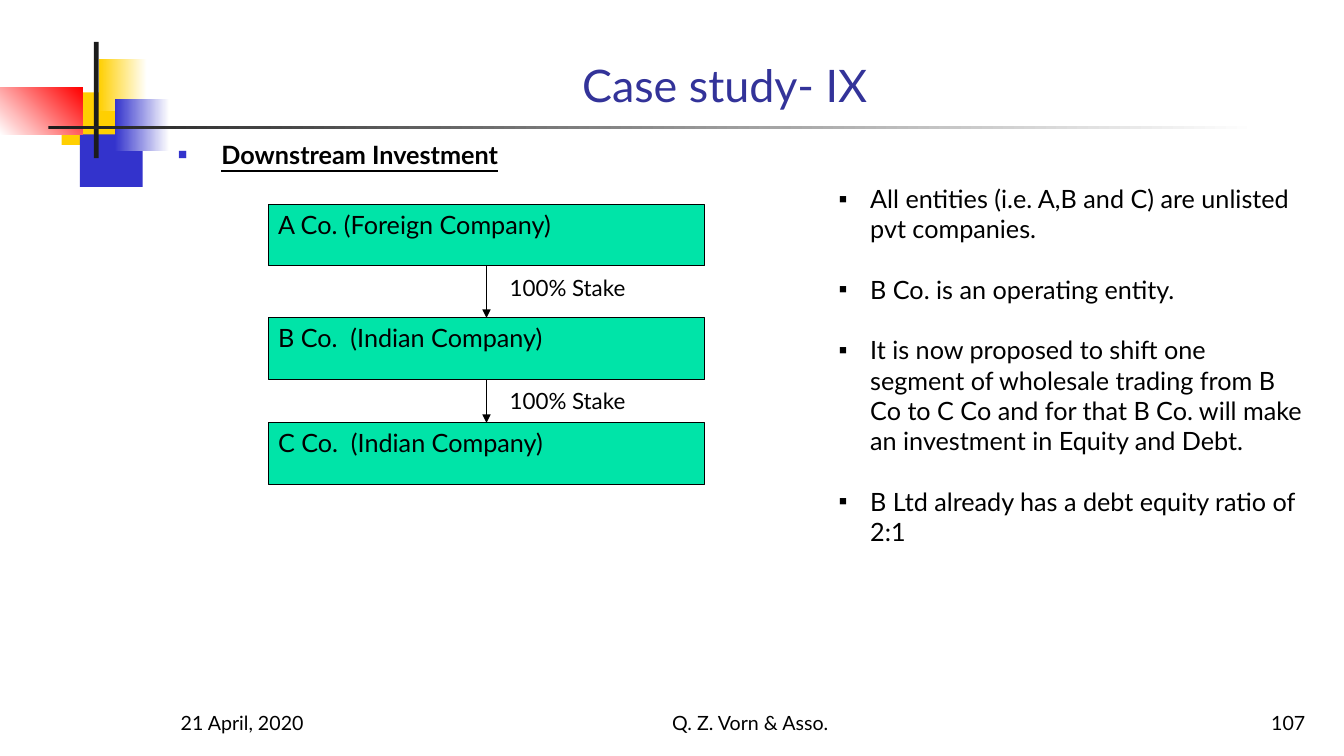
from pptx import Presentation
from pptx.util import Pt
from pptx.dml.color import RGBColor
from pptx.enum.shapes import MSO_SHAPE as Kind, MSO_CONNECTOR as Wire
from pptx.enum.text import MSO_ANCHOR as Anchor, MSO_AUTO_SIZE as Fit, PP_ALIGN as Align
from lxml.etree import SubElement
from pptx.oxml.ns import qn


def tint(code):
    return RGBColor.from_string(code)


def write(para, text, size, color="000000", align=Align.LEFT):
    para.alignment = align
    run = para.add_run()
    run.text = text
    run.font.name = "Lato"
    run.font.size = Pt(size)
    run.font.color.rgb = tint(color)
    return run


deck = Presentation()
deck.slide_width, deck.slide_height = Pt(960), Pt(540)
slide = deck.slides.add_slide(deck.slide_layouts[1])
shapes = slide.shapes

decor = [
    (44, 66, 46, 37.5, "FFCF01", None, 0),
    (57, 96, 45, 37.5, "3333CC", None, 0),
    (70.5, 42, 34.5, 37.5, "FFCF01", "FFFFFF", 0),
    (82, 70.5, 39, 37.5, "3333CC", "FFFFFF", 0),
    (0, 62.5, 59, 33.5, "FFFFFF", "FF0000", 45),
    (67, 30, 3.5, 83, "1C1C1C", None, 0),
    (34.5, 90, 864, 2.25, "1C1C1C", "FFFFFF", 0),
]
for x, y, w, h, start, end, angle in decor:
    block = shapes.add_shape(Kind.RECTANGLE, Pt(x), Pt(y), Pt(w), Pt(h))
    block.shadow.inherit = False
    block.line.fill.background()
    if end:
        block.fill.gradient()
        block.fill.gradient_angle = angle
        for stop, code, place in zip(block.fill.gradient_stops, (start, end), (0, 1)):
            stop.color.rgb = tint(code)
            stop.position = place
    else:
        block.fill.solid()
        block.fill.fore_color.rgb = tint(start)

title = shapes.title
title.left, title.top, title.width, title.height = Pt(211), Pt(16.5), Pt(613.5), Pt(67)
title.text_frame.vertical_anchor = Anchor.BOTTOM
title.text_frame.auto_size = Fit.NONE
write(title.text_frame.paragraphs[0], "Case study- IX", 32, "333399", Align.CENTER)

body = slide.placeholders[1]
body.left, body.top, body.width, body.height = Pt(120), Pt(96), Pt(705), Pt(408)
body.text_frame.auto_size = Fit.NONE
topic = body.text_frame.paragraphs[0]
head = write(topic, "Downstream Investment", 18)
head.font.bold = head.font.underline = True

notes = shapes.add_textbox(Pt(592), Pt(127.5), Pt(348), Pt(312.5))
notes.text_frame.word_wrap = True
points = [
    "All entities (i.e. A,B and C) are unlisted pvt companies.",
    "B Co. is an operating entity.",
    "It is now proposed to shift one segment of wholesale trading from B Co to C Co "
    "and for that B Co. will make an investment in Equity and Debt.",
    "B Ltd already has a debt equity ratio of 2:1",
]
bullets = [(topic, 31, "■", "3333CC", 60)]
for i, text in enumerate(points):
    para = notes.text_frame.add_paragraph() if i else notes.text_frame.paragraphs[0]
    para.space_before = Pt(21.6 if i else 0)
    write(para, text, 18)
    bullets.append((para, 22.5, "▪", "000000", 100))

for para, inset, mark, code, scale in bullets:
    props = para._p.get_or_add_pPr()
    props.set("marL", str(Pt(inset)))
    props.set("indent", str(-Pt(inset)))
    SubElement(SubElement(props, qn("a:buClr")), qn("a:srgbClr"), val=code)
    SubElement(props, qn("a:buSzPct"), val=str(scale * 1000))
    SubElement(props, qn("a:buFont"), typeface="Arial")
    SubElement(props, qn("a:buChar"), char=mark)

left, wide, tall = 191.5, 312, 44
tops = [146, 227, 302]
firms = ["A Co. (Foreign Company)", "B Co.  (Indian Company)", "C Co.  (Indian Company)"]
for top, firm in zip(tops, firms):
    box = shapes.add_shape(Kind.RECTANGLE, Pt(left), Pt(top), Pt(wide), Pt(tall))
    box.shadow.inherit = False
    box.fill.solid()
    box.fill.fore_color.rgb = tint("00E4A8")
    box.line.color.rgb = tint("000000")
    box.line.width = Pt(0.75)
    box.text_frame.vertical_anchor = Anchor.TOP
    write(box.text_frame.paragraphs[0], firm, 18)

mid = left + wide / 2
for top, low in zip(tops, tops[1:]):
    base = top + tall
    arrow = shapes.add_connector(Wire.STRAIGHT, Pt(mid), Pt(base), Pt(mid), Pt(low))
    arrow.line.color.rgb = tint("000000")
    arrow.line.width = Pt(0.75)
    SubElement(arrow.line._get_or_add_ln(), qn("a:tailEnd"), type="triangle")
    SubElement(arrow._element.spPr, qn("a:effectLst"))
    label = shapes.add_textbox(Pt(357), Pt(base + 2), Pt(135), Pt(26.5))
    label.text_frame.word_wrap = True
    write(label.text_frame.paragraphs[0], "100% Stake", 16)

footer = [
    (122, 200, "21 April, 2020", Align.LEFT),
    (384, 304, "Q. Z. Vorn & Asso.", Align.CENTER),
    (739.5, 200, "107", Align.RIGHT),
]
for x, w, text, align in footer:
    foot = shapes.add_textbox(Pt(x), Pt(492), Pt(w), Pt(36))
    foot.text_frame.word_wrap = True
    foot.text_frame.vertical_anchor = Anchor.BOTTOM
    write(foot.text_frame.paragraphs[0], text, 14, align=align)

deck.save("out.pptx")
